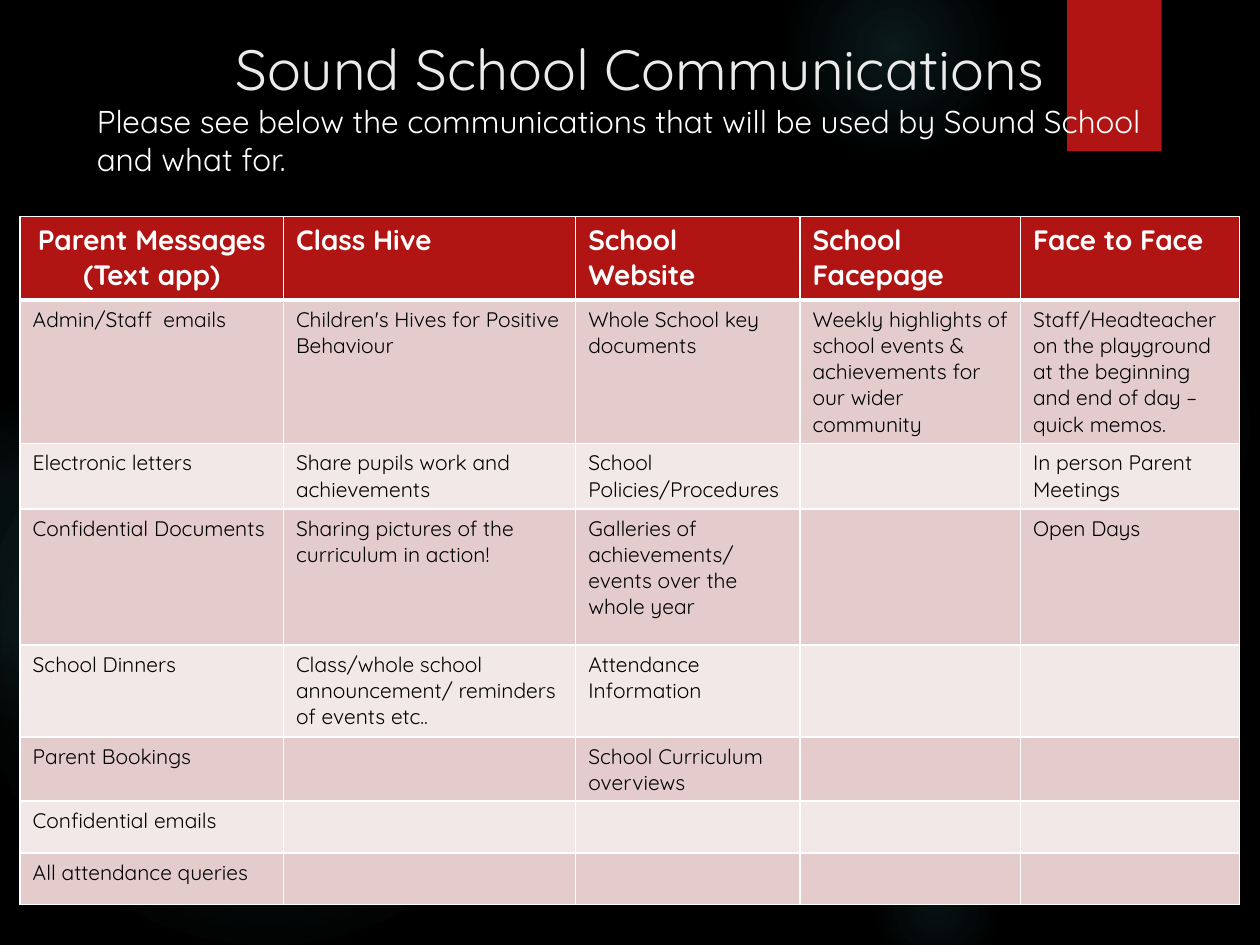
from lxml import etree
from pptx import Presentation
from pptx.dml.color import RGBColor
from pptx.enum.shapes import MSO_SHAPE
from pptx.enum.text import MSO_ANCHOR, PP_ALIGN
from pptx.oxml import parse_xml
from pptx.oxml.ns import nsdecls, qn
from pptx.util import Inches, Pt

FONT = "Quicksand"
BLACK = RGBColor(0x00, 0x00, 0x00)
WHITE = RGBColor(0xFF, 0xFF, 0xFF)
OFF_WHITE = RGBColor(0xEB, 0xEB, 0xEB)
RED = RGBColor(0xB0, 0x15, 0x13)
PINK = RGBColor(0xE4, 0xCC, 0xCC)
PALE_PINK = RGBColor(0xF2, 0xE8, 0xE7)
TEAL = RGBColor(0x50, 0xB9, 0xC1)

# left, top, diameter, then (position %, opacity %) stops
GLOWS = [
    (6.89, 1.83, 3.08, [(0, 7), (36, 6), (69, 0)]),
    (6.22, -0.5, 1.75, [(0, 14), (36, 7), (73, 0)]),
    (6.89, 6.67, 1.08, [(0, 9), (36, 5), (66, 0)]),
    (-0.17, 2.92, 4.58, [(0, 11), (36, 10), (75, 0)]),
    (-0.92, 3.17, 2.58, [(0, 8), (36, 8), (72, 0)]),
]

COL_WIDTHS = [2.09, 2.32, 1.78, 1.75, 1.74]
ROW_HEIGHTS = [0.66, 1.14, 0.52, 1.08, 0.73, 0.51, 0.41, 0.41]
HEADERS = ["Parent Messages\n(Text app)", "Class Hive", "School Website",
           "School Facepage", "Face to Face"]
ROWS = [
    ["Admin/Staff  emails", "Children's Hives for Positive Behaviour",
     "Whole School key documents",
     "Weekly highlights of school events & achievements for our wider community",
     "Staff/Headteacher on the playground at the beginning and end of day – quick memos."],
    ["Electronic letters", "Share pupils work and achievements",
     "School Policies/Procedures", "", "In person Parent Meetings"],
    ["Confidential Documents", "Sharing pictures of the curriculum in action!",
     "Galleries of achievements/ events over the whole year", "", "Open Days"],
    ["School Dinners", "Class/whole school announcement/ reminders of events etc..",
     "Attendance Information", "", ""],
    ["Parent Bookings", "", "School Curriculum overviews", "", ""],
    ["Confidential emails", "", "", "", ""],
    ["All attendance queries", "", "", "", ""],
]


def add_run(p, text, size, color, bold=False):
    r = p.add_run()
    r.text = text
    r.font.name = FONT
    r.font.size = Pt(size)
    r.font.bold = bold
    r.font.color.rgb = color


def add_glow(slide, left, top, diameter, stops):
    s = slide.shapes.add_shape(MSO_SHAPE.OVAL, Inches(left), Inches(top),
                               Inches(diameter), Inches(diameter))
    s.shadow.inherit = False
    s.line.fill.background()
    # Radial gradient that fades to transparent
    gs = "".join(
        f'<a:gs pos="{pos * 1000}"><a:srgbClr val="{TEAL}">'
        f'<a:alpha val="{alpha * 1000}"/></a:srgbClr></a:gs>'
        for pos, alpha in stops)
    fill = parse_xml(
        f'<a:gradFill {nsdecls("a")}><a:gsLst>{gs}</a:gsLst><a:path path="circle">'
        '<a:fillToRect l="50000" t="50000" r="50000" b="50000"/></a:path></a:gradFill>')
    s.element.spPr.find(qn("a:prstGeom")).addnext(fill)


def add_backdrop(slide):
    fill = slide.background.fill
    fill.solid()
    fill.fore_color.rgb = BLACK
    for glow in GLOWS:
        add_glow(slide, *glow)
    # Red bookmark
    s = slide.shapes.add_shape(MSO_SHAPE.RECTANGLE, Inches(8.47), Inches(0),
                               Inches(0.75), Inches(1.2))
    s.shadow.inherit = False
    s.fill.solid()
    s.fill.fore_color.rgb = RED
    s.line.fill.background()


def add_text(slide, left, top, width, height, text, size, color,
             align=PP_ALIGN.LEFT, anchor=MSO_ANCHOR.TOP):
    tf = slide.shapes.add_textbox(Inches(left), Inches(top),
                                  Inches(width), Inches(height)).text_frame
    tf.word_wrap = True
    tf.vertical_anchor = anchor
    p = tf.paragraphs[0]
    p.alignment = align
    add_run(p, text, size, color)


def set_borders(cell, top=1, bottom=1):
    tc_pr = cell._tc.get_or_add_tcPr()
    for side, width in (("L", 1), ("R", 1), ("T", top), ("B", bottom)):
        ln = etree.SubElement(tc_pr, qn(f"a:ln{side}"), w=str(Pt(width)))
        fill = etree.SubElement(ln, qn("a:solidFill"))
        etree.SubElement(fill, qn("a:srgbClr"), val=str(WHITE))


def add_channel_table(slide, left, top):
    frame = slide.shapes.add_table(
        len(ROW_HEIGHTS), len(COL_WIDTHS), Inches(left), Inches(top),
        Inches(sum(COL_WIDTHS)), Inches(sum(ROW_HEIGHTS)))
    table = frame.table
    for column, width in zip(table.columns, COL_WIDTHS):
        column.width = Inches(width)
    for row, height in zip(table.rows, ROW_HEIGHTS):
        row.height = Inches(height)

    for i, texts in enumerate([HEADERS] + ROWS):
        header = i == 0
        size, color = (16, WHITE) if header else (12, BLACK)
        for j, text in enumerate(texts):
            cell = table.cell(i, j)
            # Thick rule between the header and the body
            set_borders(cell, top=3 if i == 1 else 1, bottom=3 if header else 1)
            cell.fill.solid()
            cell.fill.fore_color.rgb = RED if header else (PINK if i % 2 else PALE_PINK)
            tf = cell.text_frame
            for k, line in enumerate(text.splitlines()):
                p = tf.add_paragraph() if k else tf.paragraphs[0]
                p.alignment = PP_ALIGN.CENTER if header and j == 0 else PP_ALIGN.LEFT
                add_run(p, line, size, color, bold=header)


def main():
    prs = Presentation()
    prs.slide_width, prs.slide_height = Inches(10), Inches(7.5)
    slide = prs.slides.add_slide(prs.slide_layouts[6])
    add_backdrop(slide)
    add_text(slide, 0.95, 0.23, 8.25, 0.62, "Sound School Communications",
             32.4, OFF_WHITE, PP_ALIGN.CENTER, MSO_ANCHOR.MIDDLE)
    add_channel_table(slide, 0.16, 1.72)
    add_text(slide, 0.67, 0.76, 8.96, 0.4,
             "Please see below the communications that will be used by "
             "Sound School and what for.", 18, WHITE)
    prs.save("out.pptx")


if __name__ == "__main__":
    main()
